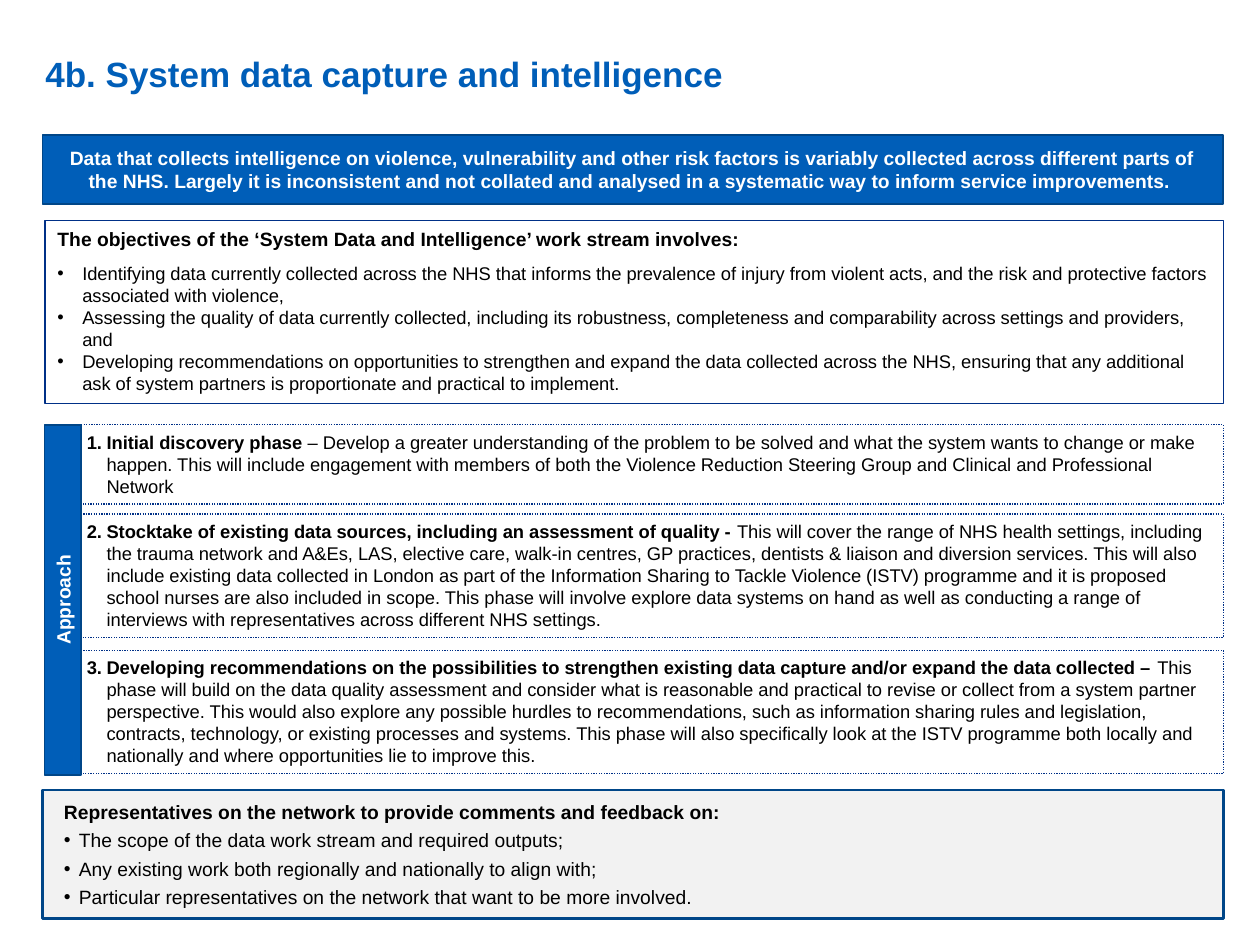
from lxml.etree import SubElement
from pptx import Presentation
from pptx.dml.color import RGBColor
from pptx.enum.dml import MSO_LINE_DASH_STYLE as Dash
from pptx.enum.shapes import MSO_SHAPE as Shape
from pptx.enum.text import MSO_ANCHOR as Anchor, MSO_AUTO_SIZE as AutoSize, PP_ALIGN as Align
from pptx.oxml.ns import qn
from pptx.util import Cm, Pt

BLUE, EDGE, NAVY = "005EB8", "004688", "003087"
BLACK, WHITE, GREY = "000000", "FFFFFF", "F2F2F2"

OBJECTIVES = [
    "Identifying data currently collected across the NHS that informs the prevalence of injury from violent acts, and the risk and protective factors associated with violence,",
    "Assessing the quality of data currently collected, including its robustness, completeness and comparability across settings and providers, and",
    "Developing recommendations on opportunities to strengthen and expand the data collected across the NHS, ensuring that any additional ask of system partners is proportionate and practical to implement.",
]
PHASES = [
    (0, 1.6, "Initial discovery phase ",
     "– Develop a greater understanding of the problem to be solved and what the system wants to change or make happen. This will include engagement with members of both the Violence Reduction Steering Group and Clinical and Professional Network"),
    (1.8, 2.49, "Stocktake of existing data sources, including an assessment of quality - ",
     "This will cover the range of NHS health settings, including the trauma network and A&Es, LAS, elective care, walk-in centres, GP practices, dentists & liaison and diversion services. This will also include existing data collected in London as part of the Information Sharing to Tackle Violence (ISTV) programme and it is proposed school nurses are also included in scope. This phase will involve explore data systems on hand as well as conducting a range of interviews with representatives across different NHS settings."),
    (4.55, 2.49, "Developing recommendations on the possibilities to strengthen existing data capture and/or expand the data collected – ",
     "This phase will build on the data quality assessment and consider what is reasonable and practical to revise or collect from a system partner perspective. This would also explore any possible hurdles to recommendations, such as information sharing rules and legislation, contracts, technology, or existing processes and systems. This phase will also specifically look at the ISTV programme both locally and nationally and where opportunities lie to improve this."),
]
FEEDBACK = [
    "The scope of the data work stream and required outputs;",
    "Any existing work both regionally and nationally to align with;",
    "Particular representatives on the network that want to be more involved.",
]


def colour(value):
    return RGBColor.from_string(value)


def apply(target, values):
    for name, value in values.items():
        setattr(target, name, value)


def add_box(page, box, line, width, fill=None, dash=None, anchor=Anchor.MIDDLE):
    shape = page.shapes.add_shape(Shape.RECTANGLE, *map(Cm, box))
    shape.shadow.inherit = False
    if fill:
        shape.fill.solid()
        shape.fill.fore_color.rgb = colour(fill)
    else:
        shape.fill.background()
    shape.line.color.rgb = colour(line)
    apply(shape.line, {"width": Pt(width), "dash_style": dash})
    apply(shape.text_frame, {"word_wrap": True, "vertical_anchor": anchor})
    return shape


def add_para(frame, runs, size, ink=BLACK, bullet=None, start=1, margin=0, hanging=0, **layout):
    para = frame.add_paragraph() if frame.paragraphs[0].runs else frame.paragraphs[0]
    apply(para, {"alignment": Align.LEFT, **layout})
    properties = para._p.get_or_add_pPr()
    properties.set("marL", str(Cm(margin)))
    properties.set("indent", str(-Cm(hanging)))
    if bullet == "number":
        SubElement(properties, qn("a:buAutoNum"), type="arabicPeriod", startAt=str(start))
    elif bullet:
        SubElement(properties, qn("a:buFont"), typeface="Arial")
        SubElement(properties, qn("a:buChar"), char=bullet)
    else:
        SubElement(properties, qn("a:buNone"))
    for text, bold in runs:
        span = para.add_run()
        span.text = text
        apply(span.font, {"name": "Arial", "size": Pt(size), "bold": bold})
        span.font.color.rgb = colour(ink)


def place_title(page, box):
    title = page.shapes.title
    apply(title, dict(zip(("left", "top", "width", "height"), map(Cm, box))))
    frame = title.text_frame
    apply(frame, {"word_wrap": True, "vertical_anchor": Anchor.TOP, "auto_size": AutoSize.NONE})
    add_para(frame, [("4b. System data capture and intelligence", True)], 20, BLUE,
             line_spacing=0.9, space_before=Pt(0))


def place_banner(page, box):
    banner = add_box(page, box, EDGE, 1, BLUE)
    text = ("Data that collects intelligence on violence, vulnerability and other risk factors is variably "
            "collected across different parts of the NHS. Largely it is inconsistent and not collated and "
            "analysed in a systematic way to inform service improvements. ")
    add_para(banner.text_frame, [(text, True)], 11, WHITE, alignment=Align.CENTER)


def place_objectives(page, box):
    frame = add_box(page, box, NAVY, 0.75, anchor=Anchor.TOP).text_frame
    add_para(frame, [("The objectives of the ‘System Data and Intelligence’ work stream involves:", True)],
             11, space_after=Pt(7))
    for objective in OBJECTIVES:
        add_para(frame, [(objective, False)], 10.5, bullet="•", margin=0.5, hanging=0.5)


def place_approach(page, box):
    left, top, width, height = box
    tab, offset = 0.74, 0.6
    for number, (drop, depth, heading, detail) in enumerate(PHASES, 1):
        phase = add_box(page, (left + offset, top + drop, width - offset, depth), NAVY, 0.75,
                        dash=Dash.ROUND_DOT, anchor=Anchor.TOP)
        add_para(phase.text_frame, [(heading, True), (detail, False)], 10.5,
                 bullet="number", start=number, margin=0.4, hanging=0.4)
    shift = (height - tab) / 2
    label = add_box(page, (left - shift, top + shift, height, tab), EDGE, 1, BLUE)
    label.rotation = 270
    add_para(label.text_frame, [("Approach", True)], 11, WHITE, alignment=Align.CENTER)


def place_feedback(page, box):
    frame = add_box(page, box, EDGE, 1.5, GREY).text_frame
    add_para(frame, [("Representatives on the network to provide comments and feedback on:", True)],
             11, margin=0.18, space_after=Pt(3))
    for request in FEEDBACK:
        add_para(frame, [(request, False)], 11, bullet="•", margin=0.48, hanging=0.3, space_after=Pt(3))


def main():
    deck = Presentation()
    apply(deck, {"slide_width": Cm(25.4), "slide_height": Cm(19.05)})
    page = deck.slides.add_slide(deck.slide_layouts[5])
    place_title(page, (0.66, 1.02, 20.24, 1.7))
    place_banner(page, (0.86, 2.72, 23.8, 1.4))
    place_objectives(page, (0.91, 4.45, 23.75, 3.68))
    place_approach(page, (0.9, 8.56, 23.76, 7.06))
    place_feedback(page, (0.86, 15.93, 23.8, 2.59))
    deck.save("out.pptx")


if __name__ == "__main__":
    main()
